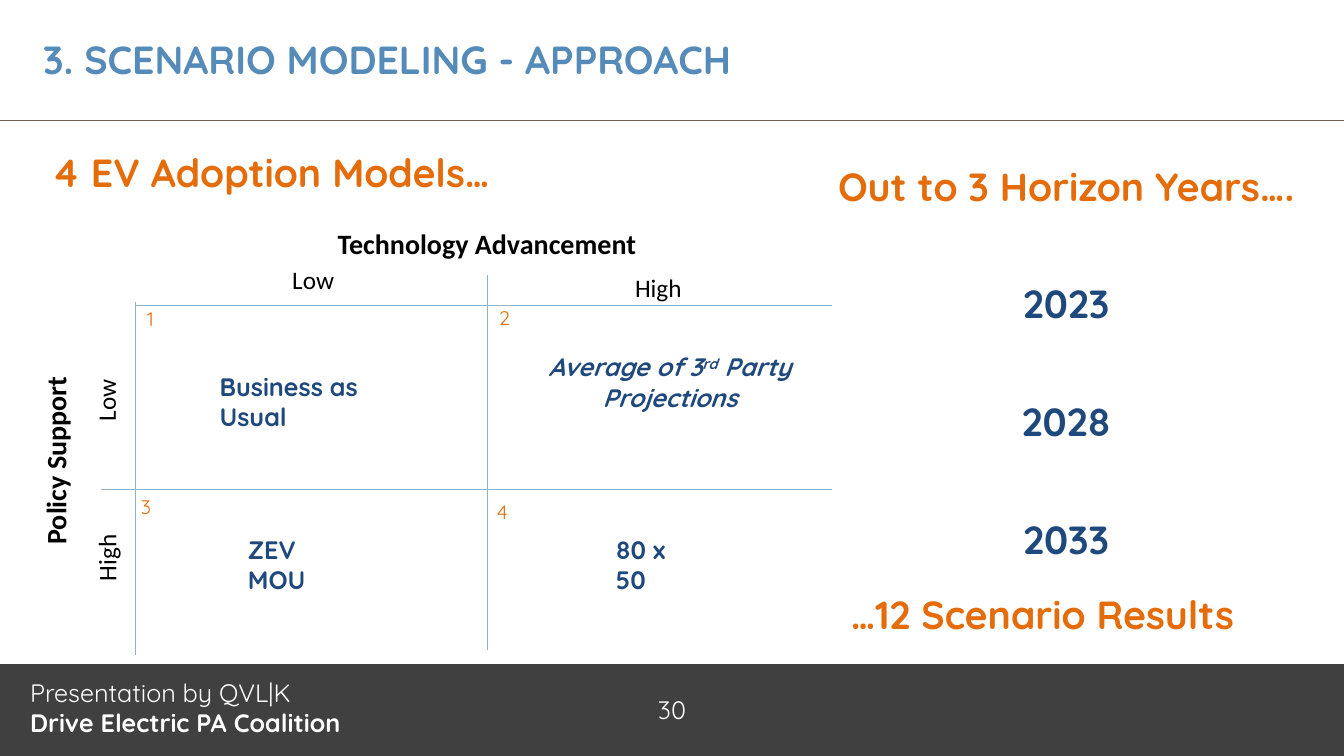
from dataclasses import dataclass, field

from lxml import etree
from pptx import Presentation
from pptx.dml.color import RGBColor
from pptx.enum.shapes import MSO_CONNECTOR, MSO_SHAPE
from pptx.enum.text import MSO_ANCHOR, MSO_AUTO_SIZE, PP_ALIGN
from pptx.oxml.ns import qn
from pptx.util import Inches, Pt

LEFT, CENTER = PP_ALIGN.LEFT, PP_ALIGN.CENTER
MIDDLE = MSO_ANCHOR.MIDDLE
GROW, FIXED = MSO_AUTO_SIZE.SHAPE_TO_FIT_TEXT, MSO_AUTO_SIZE.NONE
RECTANGLE, STRAIGHT = MSO_SHAPE.RECTANGLE, MSO_CONNECTOR.STRAIGHT

WHITE = RGBColor(0xFF, 0xFF, 0xFF)
BLACK = RGBColor(0x00, 0x00, 0x00)
CHARCOAL = RGBColor(0x40, 0x40, 0x40)
BROWN = RGBColor(0x77, 0x5F, 0x55)
TITLE_BLUE = RGBColor(0x55, 0x8B, 0xB8)
GRID_BLUE = RGBColor(0x8F, 0xB2, 0xCF)
NAVY = RGBColor(0x1F, 0x49, 0x7D)
ORANGE = RGBColor(0xE4, 0x6C, 0x0A)


def style(size: int, color: RGBColor, name: str = "Quicksand", **extra) -> dict:
    return {"size": Pt(size), "name": name, "color": color, **extra}


TITLE = style(28, TITLE_BLUE, bold=True)
HEADING = style(28, ORANGE, bold=True)
YEAR = style(28, NAVY, bold=True)
SCENARIO = style(18, NAVY, bold=True)
PROJECTION = style(18, NAVY, bold=True, italic=True)
NUMBER = style(14, ORANGE)
AXIS = style(20, BLACK, "Calibri", bold=True)
LEVEL = style(18, BLACK, "Calibri")
FOOTER = style(18, WHITE)
FOOTER_BOLD = style(18, WHITE, bold=True)


@dataclass
class Span:
    text: str
    format: dict
    baseline: int = 0


@dataclass
class Para:
    spans: list[Span]
    align: PP_ALIGN = LEFT
    spacing: float = 1.0


@dataclass
class Label:
    left: float
    top: float
    width: float
    height: float
    paras: list[Para] = field(default_factory=list)
    wrap: bool = False
    rotation: int = 0
    right_inset: float = 0.1


@dataclass
class Rule:
    x1: float
    y1: float
    x2: float
    y2: float
    color: RGBColor = GRID_BLUE


def line(text: str, format: dict, align: PP_ALIGN = LEFT, spacing: float = 1.0) -> Para:
    return Para([Span(text, format)], align, spacing)


RULES = [
    Rule(0, 6.58, 13.33, 6.58, WHITE),
    Rule(0, 1.2, 13.33, 1.2, BROWN),
    Rule(4.84, 2.73, 4.84, 6.45),
    Rule(1, 4.86, 8.25, 4.86),
    Rule(1.34, 3.03, 8.25, 3.03),
    Rule(1.34, 3, 1.34, 6.5),
]

SCENARIOS = [
    Label(left, top, width, 0.71, [line(text, SCENARIO)], True, right_inset=0.4)
    for left, top, width, text in [
        (2.08, 3.63, 2.27, "Business as Usual"),
        (2.36, 5.25, 1.31, "ZEV MOU"),
        (6.01, 5.25, 1.05, "80 x 50"),
    ]
]

LEVELS = [
    Label(left, top, width, 0.4, [line(text, LEVEL)], rotation=rotation)
    for left, top, width, text, rotation in [
        (2.8, 2.57, 0.62, "Low", 0),
        (6.2, 2.65, 0.67, "High", 0),
        (0.74, 3.77, 0.62, "Low", 270),
        (0.72, 5.33, 0.67, "High", 270),
    ]
]

NUMBERS = [
    Label(left, top, 0.31, 0.34, [line(str(number), NUMBER)])
    for number, (left, top) in enumerate(
        [(1.36, 3), (4.85, 2.99), (1.3, 4.86), (4.83, 4.91)], 1
    )
]

LABELS = [
    Label(0.2, 6.67, 4.89, 0.8, [
        line("Presentation by QVL|K", FOOTER),
        line("Drive Electric PA Coalition", FOOTER_BOLD),
    ], True),
    Label(0.33, 0.3, 12.67, 0.87, [line("3. SCENARIO MODELING - APPROACH", TITLE)], True),
    Label(7.86, 1.09, 5.43, 4.58, [
        line("Out to 3 Horizon Years….", HEADING, CENTER, 2.0),
        *[line(str(year), YEAR, CENTER, 2.5) for year in range(2023, 2034, 5)],
    ], True),
    Label(0.42, 1.42, 4.77, 0.57, [line("4 EV Adoption Models…", HEADING)]),
    *SCENARIOS,
    Label(5.33, 3.44, 2.63, 0.71, [
        Para([
            Span("Average of 3", PROJECTION),
            Span("rd", PROJECTION, 30000),
            Span(" Party", PROJECTION),
        ], CENTER),
        line("Projections", PROJECTION, CENTER),
    ]),
    *LEVELS,
    Label(3.25, 2.2, 3.19, 0.44, [line("Technology Advancement", AXIS)]),
    Label(-0.39, 4.34, 1.88, 0.44, [line("Policy Support", AXIS)], rotation=270),
    *NUMBERS,
    Label(8.34, 5.81, 4.2, 0.57, [line("…12 Scenario Results", HEADING)]),
]


def write_paras(frame, paras: list[Para]) -> None:
    for index, item in enumerate(paras):
        para = frame.add_paragraph() if index else frame.paragraphs[0]
        para.alignment = item.align
        para.line_spacing = item.spacing
        for part in item.spans:
            span = para.add_run()
            span.text = part.text
            for key, value in part.format.items():
                if key == "color":
                    span.font.color.rgb = value
                else:
                    setattr(span.font, key, value)
            if part.baseline:
                span.font._element.set("baseline", str(part.baseline))


def add_label(page, label: Label) -> None:
    box = page.shapes.add_textbox(
        Inches(label.left), Inches(label.top), Inches(label.width), Inches(label.height)
    )
    box.rotation = label.rotation
    frame = box.text_frame
    frame.word_wrap = label.wrap
    frame.auto_size = FIXED if label.wrap else GROW
    frame.margin_right = Inches(label.right_inset)
    write_paras(frame, label.paras)


def add_rule(page, rule: Rule) -> None:
    connector = page.shapes.add_connector(
        STRAIGHT, Inches(rule.x1), Inches(rule.y1), Inches(rule.x2), Inches(rule.y2)
    )
    connector.line.color.rgb = rule.color
    connector.line.width = Pt(0.75)
    etree.SubElement(connector._element.spPr, qn("a:effectLst"))


def add_footer_band(page) -> None:
    band = page.shapes.add_shape(
        RECTANGLE, Inches(0), Inches(6.58), Inches(13.33), Inches(0.92)
    )
    band.shadow.inherit = False
    band.fill.solid()
    band.fill.fore_color.rgb = CHARCOAL
    band.line.fill.background()
    band.text_frame.vertical_anchor = MIDDLE
    write_paras(band.text_frame, [line("30", FOOTER, CENTER)])


def main() -> None:
    deck = Presentation()
    deck.slide_width = Inches(13.33)
    deck.slide_height = Inches(7.5)
    page = deck.slides.add_slide(deck.slide_layouts[6])
    add_footer_band(page)
    for rule in RULES:
        add_rule(page, rule)
    for label in LABELS:
        add_label(page, label)
    deck.save("out.pptx")


if __name__ == "__main__":
    main()
